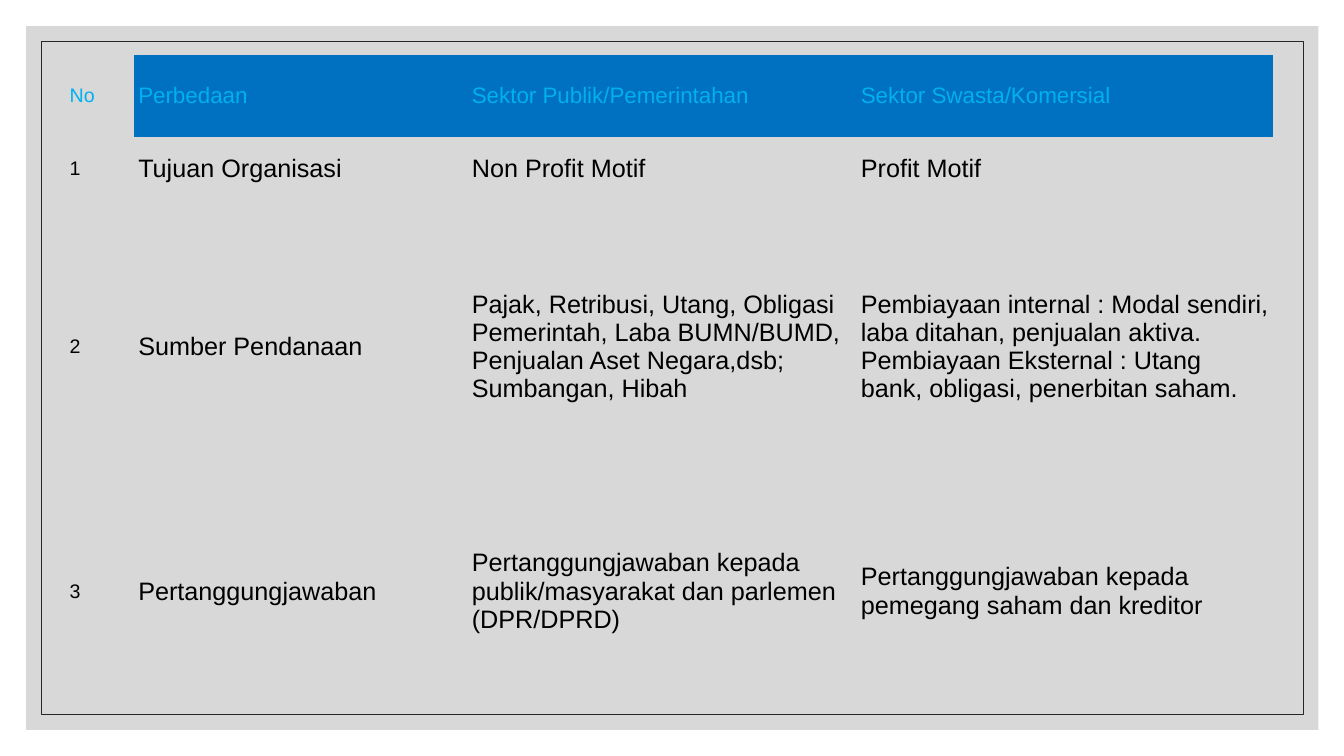
"""Build a slide with a table comparing the public and private sectors."""
import pptx
import pptx.dml.color
import pptx.enum.shapes
import pptx.enum.text
import pptx.oxml
import pptx.oxml.ns
import pptx.util

Pt = pptx.util.Pt
RGBColor = pptx.dml.color.RGBColor

GREY = RGBColor(0xBF, 0xBF, 0xBF)
DARK = RGBColor(0x26, 0x26, 0x26)
BLUE = RGBColor(0x00, 0x70, 0xC0)
SKY = RGBColor(0x00, 0xB0, 0xF0)
BLACK = RGBColor(0x00, 0x00, 0x00)

FONT = "Arial"
PLAIN_TABLE_STYLE = "{2D5ABB26-0587-4C30-8999-92F81FD0307C}"
COLUMN_WIDTHS = (49, 238.3, 277.9, 297.4)
ROW_HEIGHTS = (59, 45.4, 208.8, 140.4)
ROWS = (
    ("No", "Perbedaan", "Sektor Publik/Pemerintahan", "Sektor Swasta/Komersial"),
    ("1", "Tujuan Organisasi", "Non Profit Motif", "Profit Motif"),
    ("2", "Sumber Pendanaan",
     "Pajak, Retribusi, Utang, Obligasi Pemerintah, Laba BUMN/BUMD, "
     "Penjualan Aset Negara,dsb; Sumbangan, Hibah",
     "Pembiayaan internal : Modal sendiri, laba ditahan, penjualan aktiva.\n"
     "Pembiayaan Eksternal : Utang bank, obligasi, penerbitan saham."),
    ("3", "Pertanggungjawaban",
     "Pertanggungjawaban kepada publik/masyarakat dan parlemen (DPR/DPRD)",
     "Pertanggungjawaban kepada pemegang saham dan kreditor"),
)


def add_rectangle(page, left, top, width, height):
    """Add a rectangle without a shadow."""
    box = page.shapes.add_shape(
        pptx.enum.shapes.MSO_SHAPE.RECTANGLE, Pt(left), Pt(top), Pt(width), Pt(height))
    box.shadow.inherit = False
    return box


def add_panel(page):
    """Add the translucent grey panel and the thin frame inside it."""
    panel = add_rectangle(page, 18.7, 18.7, 923, 502.6)
    panel.fill.solid()
    panel.fill.fore_color.rgb = GREY
    panel.line.fill.background()
    color = panel.fill._xPr.find(".//" + pptx.oxml.ns.qn("a:srgbClr"))
    color.append(pptx.oxml.parse_xml(
        f'<a:alpha {pptx.oxml.ns.nsdecls("a")} val="60000"/>'))
    frame = add_rectangle(page, 29.5, 29.5, 901.4, 481)
    frame.fill.background()
    frame.line.color.rgb = DARK
    frame.line.width = Pt(0.5)


def format_cell(cell, text, size, color, fill):
    """Write and style one table cell."""
    cell.text_frame.text = text
    cell.vertical_anchor = pptx.enum.text.MSO_ANCHOR.MIDDLE
    cell.margin_left = cell.margin_right = Pt(3)
    cell.margin_top = cell.margin_bottom = Pt(1.5)
    if fill is None:
        cell.fill.background()
    else:
        cell.fill.solid()
        cell.fill.fore_color.rgb = fill
    for para in cell.text_frame.paragraphs:
        for span in para.runs:
            span.font.name = FONT
            span.font.size = Pt(size)
            span.font.bold = False
            span.font.color.rgb = color


def add_comparison(page):
    """Add the table that compares the two sectors."""
    table = page.shapes.add_table(
        len(ROWS), len(COLUMN_WIDTHS), Pt(46.8), Pt(39),
        Pt(sum(COLUMN_WIDTHS)), Pt(sum(ROW_HEIGHTS))).table
    table.horz_banding = False
    table._tbl.tblPr.find(pptx.oxml.ns.qn("a:tableStyleId")).text = PLAIN_TABLE_STYLE
    for column, width in zip(table.columns, COLUMN_WIDTHS):
        column.width = Pt(width)
    for row_index, (row, height) in enumerate(zip(table.rows, ROW_HEIGHTS)):
        row.height = Pt(height)
        is_header = row_index == 0
        for column_index, cell in enumerate(row.cells):
            is_number = column_index == 0
            size = 14 if is_number else 16 if is_header else 18
            fill = BLUE if is_header and not is_number else None
            format_cell(cell, ROWS[row_index][column_index], size,
                        SKY if is_header else BLACK, fill)


def main():
    """Build and save the deck."""
    deck = pptx.Presentation()
    deck.slide_width, deck.slide_height = Pt(960), Pt(540)
    page = deck.slides.add_slide(deck.slide_layouts.get_by_name("Blank"))
    add_panel(page)
    add_comparison(page)
    deck.save("out.pptx")


if __name__ == "__main__":
    main()
